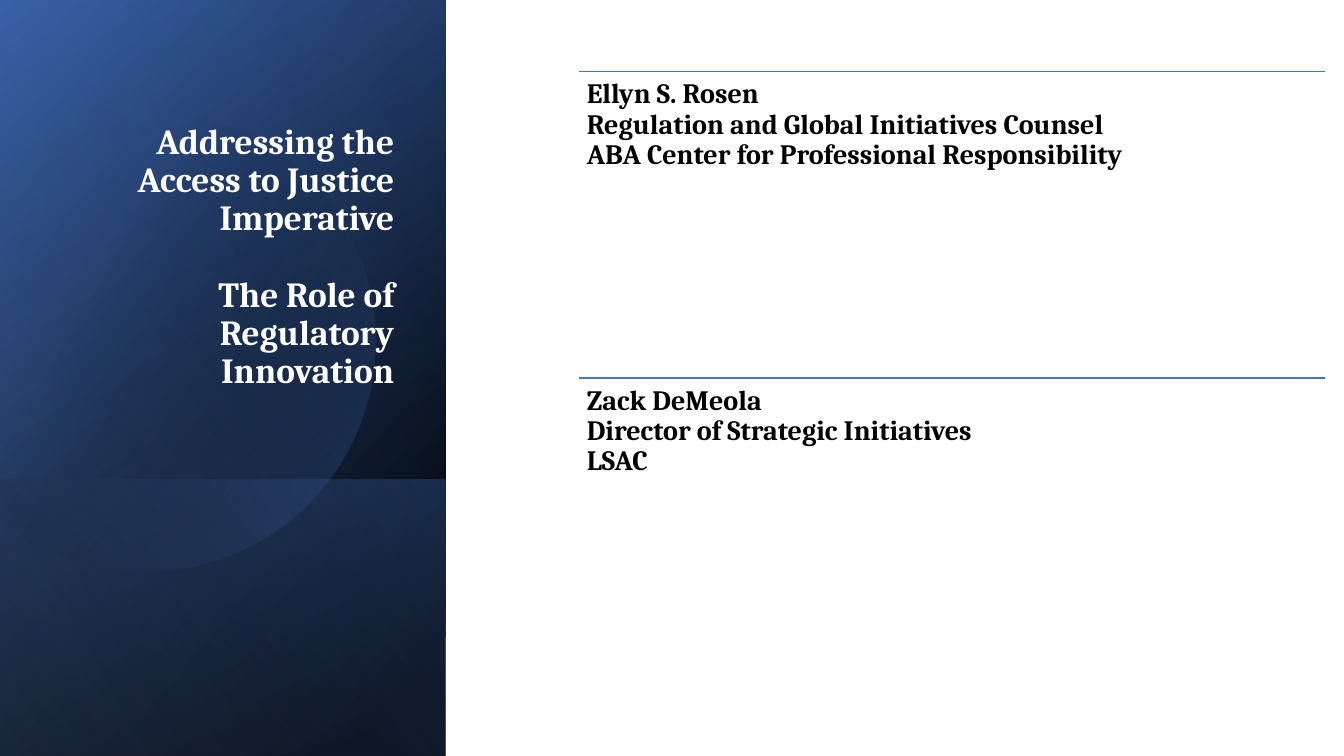
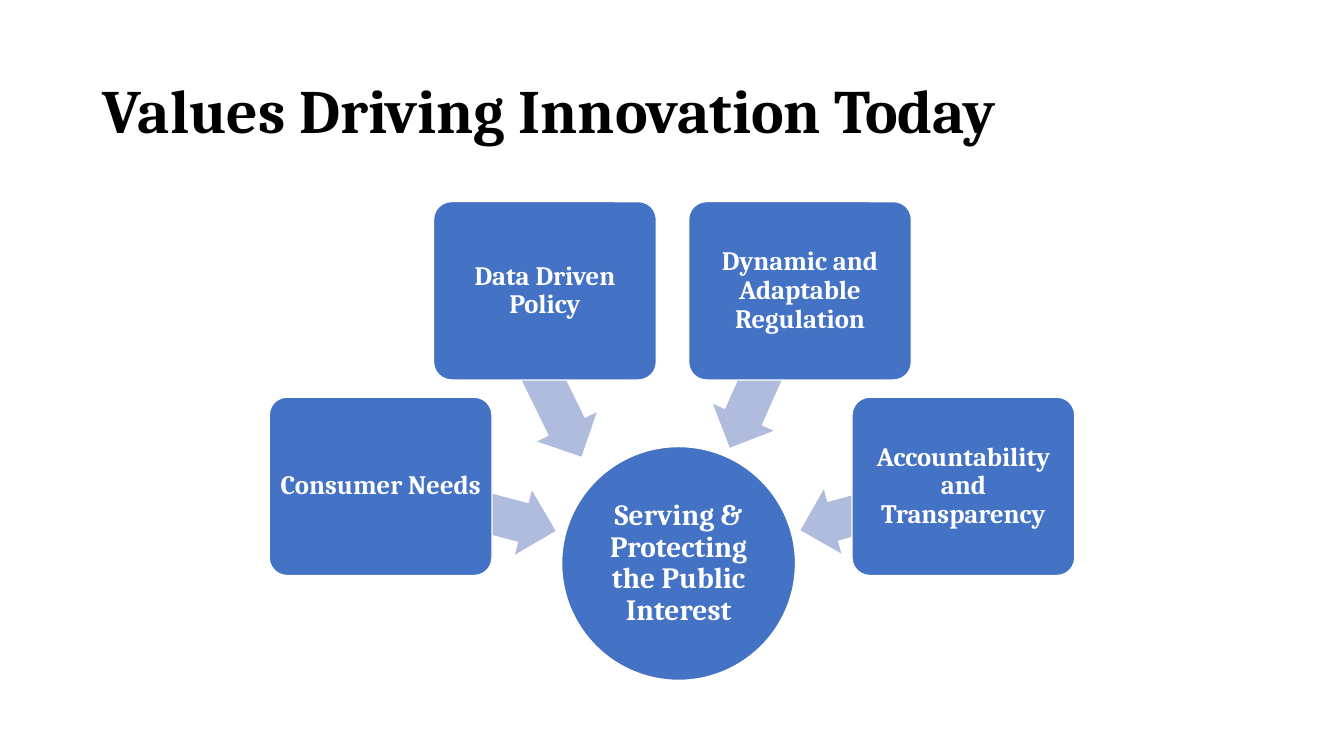
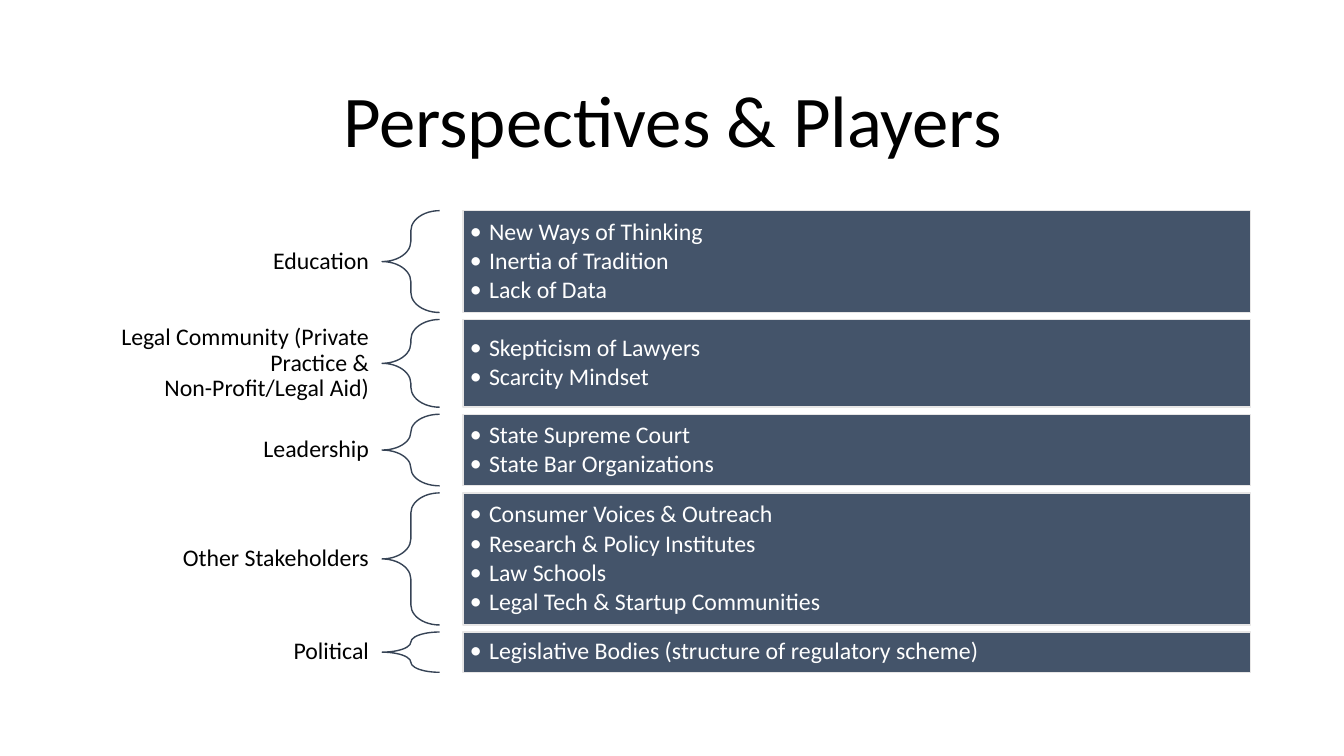
from dataclasses import dataclass

from pptx import Presentation
from pptx.dml.color import RGBColor
from pptx.enum.shapes import MSO_CONNECTOR, MSO_SHAPE
from pptx.enum.text import MSO_ANCHOR, MSO_AUTO_SIZE, PP_ALIGN
from pptx.oxml import parse_xml
from pptx.oxml.ns import nsdecls, qn
from pptx.util import Inches, Pt

# Shared theme
WHITE = RGBColor(0xFF, 0xFF, 0xFF)
BLACK = RGBColor(0x00, 0x00, 0x00)
BLUE = RGBColor(0x44, 0x72, 0xC4)
DEEP_BLUE = RGBColor(0x2F, 0x55, 0x97)
SOFT_BLUE = RGBColor(0x8F, 0xAA, 0xDC)
PALE_BLUE = RGBColor(0xB0, 0xBC, 0xDE)
SLATE = RGBColor(0x44, 0x54, 0x6A)
DARK_SLATE = RGBColor(0x36, 0x43, 0x55)
LIGHT_GRAY = RGBColor(0xE7, 0xE6, 0xE6)
SERIF = "Cambria"
SANS = "Calibri"
SLIDE_WIDTH, SLIDE_HEIGHT = 13.33, 7.5
TITLE_LAYOUT, TWO_CONTENT_LAYOUT = 5, 3
TITLE_LEFT, TITLE_WIDTH = 0.92, 11.5


@dataclass(frozen=True)
class Stop:
    position: int
    color: RGBColor
    alpha: int = 100


@dataclass(frozen=True)
class Panel:
    top: float
    height: float
    angle: int
    stops: tuple[Stop, ...]


@dataclass(frozen=True)
class Speaker:
    top: float
    text: str


@dataclass(frozen=True)
class Value:
    text: str
    left: float
    top: float
    arrow_box: tuple[float, float, float, float]
    arrow_rotation: float


@dataclass(frozen=True)
class Player:
    label: str
    height: float
    points: tuple[str, ...]


PANEL_WIDTH = 4.42
PANELS = (
    Panel(0, 7.5, 50, (Stop(8, BLACK), Stop(100, DEEP_BLUE))),
    Panel(0, 7.5, 30, (Stop(0, BLACK, 0), Stop(99, BLUE, 46))),
    Panel(4.76, 2.74, 130, (Stop(2, BLUE, 29), Stop(100, BLACK, 30))),
)
TOP_PANEL = Panel(0, 7.5, 120, (Stop(0, BLACK, 0), Stop(99, SOFT_BLUE, 11)))
DISC_STOPS = (Stop(29, BLACK, 0), Stop(100, BLUE, 43))
# Each curve starts where the one before it ends
DISC_START = (1.49, 1.1)
DISC_CURVES = (
    ((2.46, 1.12), (3.35, 1.77), (3.63, 2.75)),
    ((3.98, 3.97), (3.28, 5.23), (2.07, 5.58)),
    ((1.31, 5.8), (0.53, 5.61), (0, 5.16)),
    ((0, 5.16), (0, 1.61), (0, 1.61)),
    ((0.23, 1.42), (0.5, 1.28), (0.8, 1.19)),
    ((1.03, 1.13), (1.26, 1.1), (1.49, 1.1)),
)
SPEAKERS = (
    Speaker(0.71, "Ellyn S. Rosen\nRegulation and Global Initiatives Counsel\n"
                  "ABA Center for Professional Responsibility"),
    Speaker(3.75, "Zack DeMeola\nDirector of Strategic Initiatives\nLSAC"),
)
VALUES = (
    Value("Consumer Needs", 2.67, 3.94, (3.75, 4.71, 1.79, 0.66), 194.7),
    Value("Data Driven Policy", 4.3, 2, (4.5, 3.41, 1.76, 0.66), 243.9),
    Value("Dynamic and Adaptable Regulation", 6.83, 2, (6.73, 3.33, 1.71, 0.66), 293.9),
    Value("Accountability and Transparency", 8.45, 3.94, (7.91, 4.71, 1.67, 0.66), 344.7),
)
PLAYERS = (
    Player("Education", 1.01, ("New Ways of Thinking", "Inertia of Tradition", "Lack of Data")),
    Player("Legal Community (Private Practice & Non-Profit/Legal Aid)", 0.87,
           ("Skepticism of Lawyers", "Scarcity Mindset")),
    Player("Leadership", 0.71, ("State Supreme Court", "State Bar Organizations")),
    Player("Other Stakeholders", 1.31,
           ("Consumer Voices & Outreach", "Research & Policy Institutes", "Law Schools",
            "Legal Tech & Startup Communities")),
    Player("Political", 0.4, ("Legislative Bodies (structure of regulatory scheme)",)),
)


def write_text(shape, paragraphs, *, size, font=SERIF, color=WHITE, bold=False,
               align=PP_ALIGN.LEFT, anchor=MSO_ANCHOR.MIDDLE, insets=(0.1, 0.05),
               gap=0, bullet=False):
    """Fill a shape with paragraphs, gap points apart; a newline breaks a line."""
    frame = shape.text_frame
    frame.word_wrap = True
    frame.auto_size = MSO_AUTO_SIZE.NONE
    frame.vertical_anchor = anchor
    frame.margin_left = frame.margin_right = Inches(insets[0])
    frame.margin_top = frame.margin_bottom = Inches(insets[1])
    for index, text in enumerate(paragraphs):
        paragraph = frame.paragraphs[0] if index == 0 else frame.add_paragraph()
        properties = paragraph._p.get_or_add_pPr()
        indent = Inches(0.19) if bullet else 0
        properties.set("marL", str(indent))
        properties.set("indent", str(-indent))
        if bullet:
            properties.append(parse_xml(f'<a:buFont {nsdecls("a")} typeface="{font}"/>'))
            properties.append(parse_xml(f'<a:buChar {nsdecls("a")} char="•"/>'))
        else:
            properties.append(parse_xml(f'<a:buNone {nsdecls("a")}/>'))
        paragraph.alignment = align
        paragraph.line_spacing = 0.9
        paragraph.space_before = Pt(gap if index else 0)
        paragraph.space_after = Pt(0)
        for line_index, line in enumerate(text.split("\n")):
            if line_index:
                paragraph.add_line_break()
            run = paragraph.add_run()
            run.text = line
            run.font.name = font
            run.font.size = Pt(size)
            run.font.bold = bold
            run.font.color.rgb = color


def place(shape, left, top, width, height):
    shape.left, shape.top = Inches(left), Inches(top)
    shape.width, shape.height = Inches(width), Inches(height)


def set_title(slide, paragraphs, box, **text_format):
    place(slide.shapes.title, *box)
    write_text(slide.shapes.title, paragraphs, **text_format)


def style(shape, fill=None, line=None):
    shape.shadow.inherit = False
    if fill is None:
        shape.fill.background()
    else:
        shape.fill.solid()
        shape.fill.fore_color.rgb = fill
    if line is None:
        shape.line.fill.background()
    else:
        shape.line.color.rgb = line
        shape.line.width = Pt(1)


def add_shape(slide, kind, box, fill=None, line=None, adjustments=()):
    shape = slide.shapes.add_shape(kind, *(Inches(length) for length in box))
    for index, adjustment in enumerate(adjustments):
        shape.adjustments[index] = adjustment
    style(shape, fill, line)
    return shape


def set_gradient(shape, stops, angle):
    """Give the shape a linear gradient whose stops may be transparent."""
    style(shape)
    stop_xml = "".join(
        f'<a:gs pos="{stop.position * 1000}"><a:srgbClr val="{stop.color}">'
        f'<a:alpha val="{stop.alpha * 1000}"/></a:srgbClr></a:gs>' for stop in stops)
    gradient = parse_xml(
        f'<a:gradFill {nsdecls("a")} rotWithShape="1"><a:gsLst>{stop_xml}</a:gsLst>'
        f'<a:lin ang="{angle * 60000}" scaled="0"/></a:gradFill>')
    properties = shape.element.spPr
    properties.replace(properties.find(qn("a:noFill")), gradient)


def add_panel(slide, panel):
    """Draw a left-hand panel, turned a quarter so its gradient runs inwards."""
    shift = (panel.height - PANEL_WIDTH) / 2
    shape = add_shape(slide, MSO_SHAPE.RECTANGLE,
                      (-shift, panel.top + shift, panel.height, PANEL_WIDTH))
    shape.rotation = 90
    shape.element.spPr.find(qn("a:xfrm")).set("flipH", "1")
    set_gradient(shape, panel.stops, panel.angle)


def add_disc(slide):
    """Draw the disc: its points become cubic curves, three points to a curve."""
    builder = slide.shapes.build_freeform(
        *(Inches(length) for length in DISC_START), scale=1.0)
    builder.add_line_segments(
        [(Inches(x), Inches(y)) for curve in DISC_CURVES for x, y in curve], close=True)
    disc = builder.convert_to_shape()
    outline = disc.element.spPr.find(".//" + qn("a:path"))
    segments = outline.findall(qn("a:lnTo"))
    for first in range(0, len(segments), 3):
        curve = parse_xml(f'<a:cubicBezTo {nsdecls("a")}/>')
        segments[first].addprevious(curve)
        for segment in segments[first:first + 3]:
            curve.append(segment[0])
            outline.remove(segment)
    set_gradient(disc, DISC_STOPS, 30)


def add_rule(slide, left, top, width):
    rule = slide.shapes.add_connector(
        MSO_CONNECTOR.STRAIGHT, Inches(left), Inches(top), Inches(left + width), Inches(top))
    rule.line.color.rgb = BLUE
    rule.line.width = Pt(1)
    rule.element.spPr.append(parse_xml(f'<a:effectLst {nsdecls("a")}/>'))


def build_speakers(presentation):
    slide = presentation.slides.add_slide(presentation.slide_layouts[TWO_CONTENT_LAYOUT])
    bodies = [shape for shape in slide.placeholders if shape.placeholder_format.idx in (1, 2)]
    # Backdrop and left panel
    add_shape(slide, MSO_SHAPE.RECTANGLE, (0, 0, SLIDE_WIDTH, SLIDE_HEIGHT), WHITE)
    for panel in PANELS:
        add_panel(slide, panel)
    add_disc(slide)
    add_panel(slide, TOP_PANEL)
    # Title, brought in front of the panel
    set_title(slide, ("Addressing the Access to Justice Imperative",
                      "The Role of Regulatory Innovation"),
              (0.51, 0.64, 3.5, 3.29), size=25.2, bold=True, align=PP_ALIGN.RIGHT,
              anchor=MSO_ANCHOR.BOTTOM, gap=27.4)
    slide.shapes.element.append(slide.shapes.title.element)
    # Speakers, each under a rule
    left, width = 5.74, 7.4
    for body, speaker in zip(bodies, SPEAKERS):
        add_rule(slide, left, speaker.top, width)
        place(body, left, speaker.top, width, 3.03)
        write_text(body, (speaker.text,), size=20, color=BLACK, bold=True,
                   anchor=MSO_ANCHOR.TOP, insets=(0.08, 0.08))
        slide.shapes.element.append(body.element)


def build_values(presentation):
    slide = presentation.slides.add_slide(presentation.slide_layouts[TITLE_LAYOUT])
    set_title(slide, ("Values Driving Innovation Today",), (TITLE_LEFT, 0.4, TITLE_WIDTH, 1.45),
              size=44, color=BLACK, bold=True)
    # Hub
    hub = add_shape(slide, MSO_SHAPE.OVAL, (5.57, 4.43, 2.32, 2.32), BLUE, WHITE)
    write_text(hub, ("Serving & Protecting the Public Interest",), size=21, bold=True,
               align=PP_ALIGN.CENTER, insets=(0.01, 0.01))
    # Values pointing at the hub
    for value in VALUES:
        arrow = add_shape(slide, MSO_SHAPE.LEFT_ARROW, value.arrow_box, PALE_BLUE,
                          adjustments=(0.6, 0.5))
        arrow.rotation = value.arrow_rotation
        card = add_shape(slide, MSO_SHAPE.ROUNDED_RECTANGLE, (value.left, value.top, 2.21, 1.77),
                         BLUE, WHITE, (0.1,))
        write_text(card, (value.text,), size=19, bold=True, align=PP_ALIGN.CENTER,
                   insets=(0.04, 0.04))


def build_players(presentation):
    slide = presentation.slides.add_slide(presentation.slide_layouts[TITLE_LAYOUT])
    set_title(slide, ("Perspectives & Players",), (TITLE_LEFT, 0.61, TITLE_WIDTH, 1.24),
              size=52, font=SANS, color=BLACK, align=PP_ALIGN.CENTER)
    # Rows of label, brace and list
    top, row_gap = 2.09, 0.07
    for player in PLAYERS:
        label = slide.shapes.add_textbox(
            Inches(TITLE_LEFT), Inches(top), Inches(2.87), Inches(player.height))
        write_text(label, (player.label,), size=17, font=SANS, color=BLACK,
                   align=PP_ALIGN.RIGHT, insets=(0.13, 0.05))
        add_shape(slide, MSO_SHAPE.LEFT_BRACE, (3.79, top, 0.57, player.height),
                  line=DARK_SLATE, adjustments=(0.35, 0.5))
        box = add_shape(slide, MSO_SHAPE.RECTANGLE, (4.59, top, 7.81, player.height),
                        SLATE, LIGHT_GRAY)
        write_text(box, player.points, size=17, font=SANS, insets=(0.07, 0.07),
                   gap=2.5, bullet=True)
        top += player.height + row_gap


def main():
    presentation = Presentation()
    presentation.slide_width = Inches(SLIDE_WIDTH)
    presentation.slide_height = Inches(SLIDE_HEIGHT)
    build_speakers(presentation)
    build_values(presentation)
    build_players(presentation)
    presentation.save("out.pptx")


if __name__ == "__main__":
    main()
